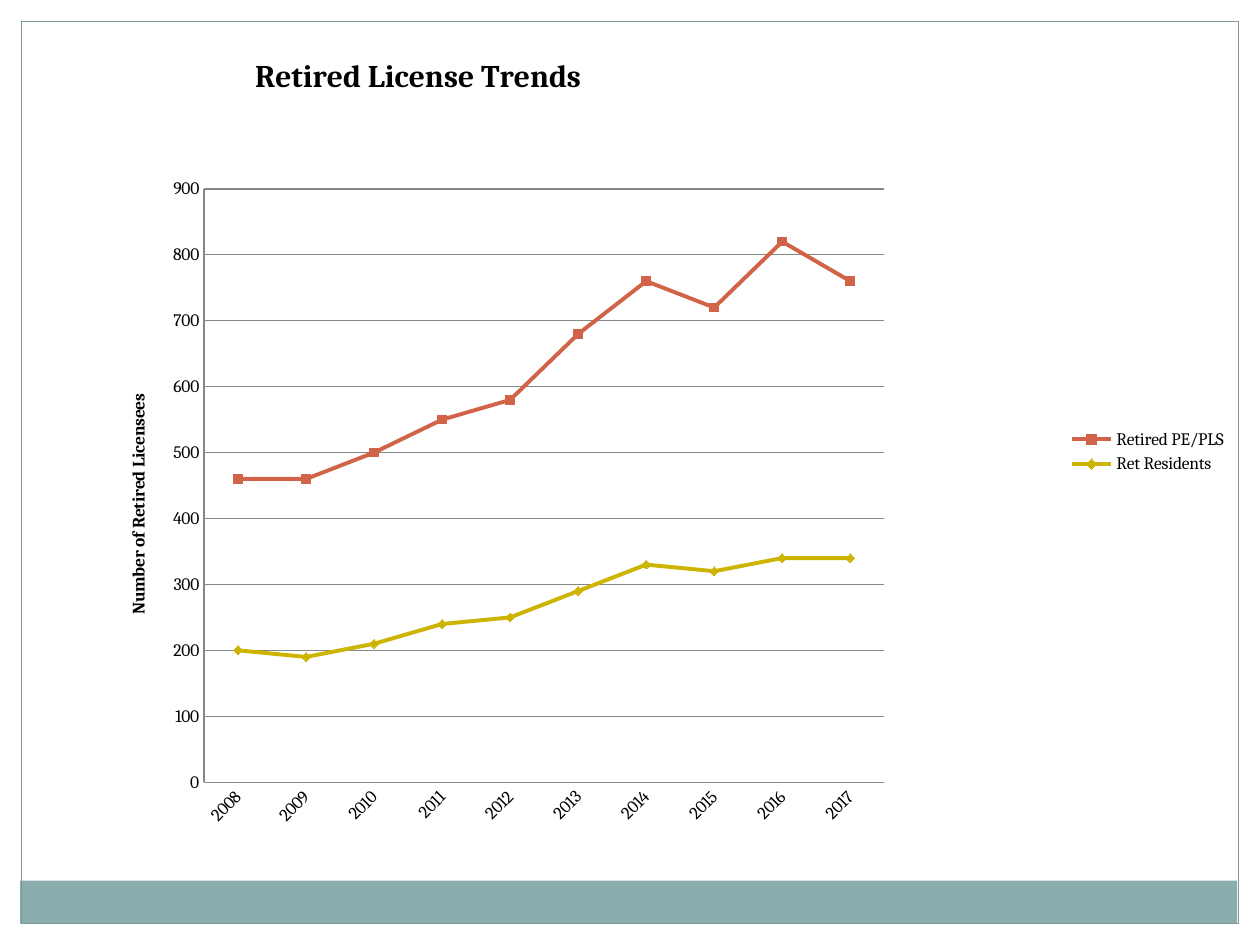
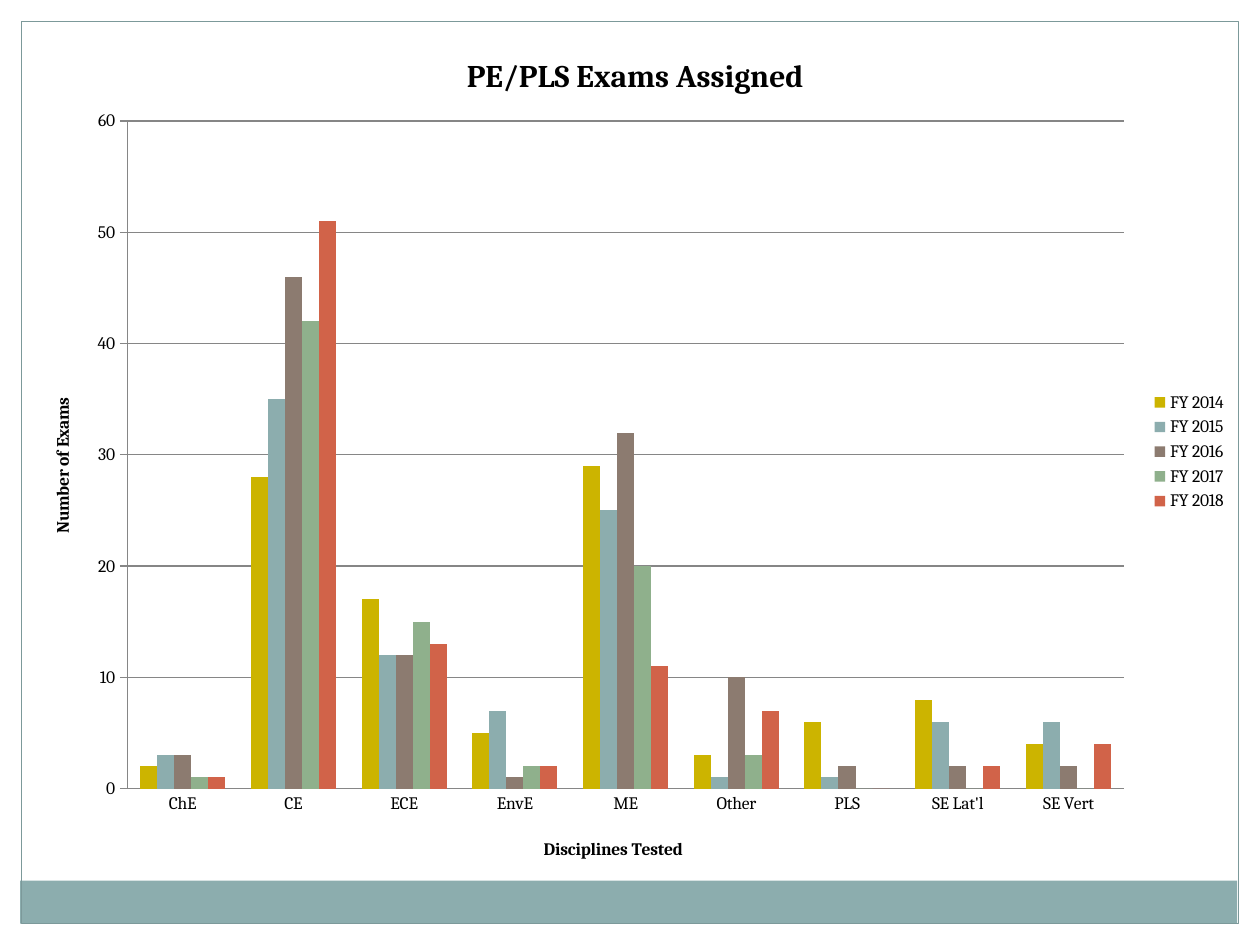
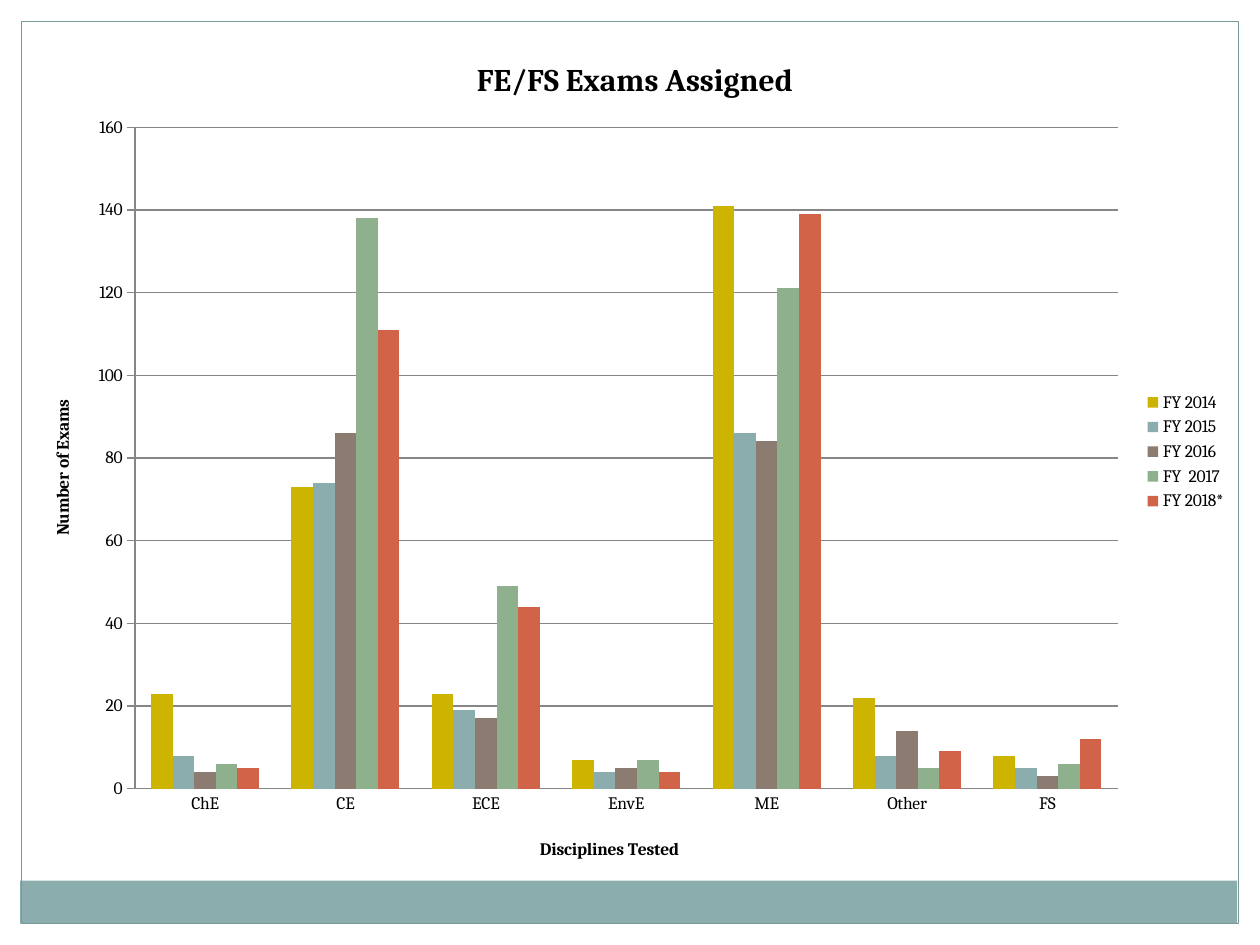
import dataclasses

import lxml.etree
import pptx
import pptx.chart.axis
import pptx.chart.chart
import pptx.chart.data
import pptx.dml.color
import pptx.enum.chart
import pptx.enum.dml
import pptx.enum.shapes
import pptx.oxml.ns
import pptx.slide
import pptx.util

WIDTH, HEIGHT = 10, 7.5
MARGIN = 0.17
CHART_WIDTH, CHART_HEIGHT = 9.67, 6.83

FONT = "Cambria"
BLACK, WHITE, GRAY = "000000", "FFFFFF", "868686"
BORDER = "7C999A"
YELLOW, TEAL, BROWN, GREEN, RED = "CCB400", "8CADAE", "8C7B70", "8FB08C", "D16349"

XL = pptx.enum.chart
Point = tuple[float, float]
Box = tuple[float, float, float, float]
qn = pptx.oxml.ns.qn


@dataclasses.dataclass(frozen=True)
class Panel:
    box: Box
    fill: str | None = None
    line: str | None = None


@dataclasses.dataclass(frozen=True)
class Title:
    text: str
    at: Point


@dataclasses.dataclass(frozen=True)
class Series:
    name: str
    values: list[int]
    color: str


@dataclasses.dataclass(frozen=True)
class ChartSlide:
    """Places are inches on the slide; charts without a category title have lines."""
    title: Title
    value_title: Title
    category_title: Title | None
    plot: Box
    maximum: int
    step: int
    categories: list[str]
    series: list[Series]


FRAME = [
    Panel((0, 0, WIDTH, MARGIN), fill=WHITE),
    Panel((WIDTH - MARGIN, 0, MARGIN, HEIGHT), fill=WHITE),
    Panel((0, 0, MARGIN, HEIGHT), fill=WHITE),
    Panel((0.16, 6.99, 9.66, 0.34), fill=TEAL),
    Panel((MARGIN, MARGIN, WIDTH - 2 * MARGIN, HEIGHT - 2 * MARGIN), line=BORDER),
]

SLIDES = [
    ChartSlide(
        Title("Retired License Trends", (1.98, 0.39)),
        Title("Number of Retired Licensees", (0.98, 3.1)),
        None,
        (1.62, 1.5, 5.4, 4.71), 900, 100,
        [str(year) for year in range(2008, 2018)],
        [
            Series("Retired PE/PLS",
                   [460, 460, 500, 550, 580, 680, 760, 720, 820, 760], RED),
            Series("Ret Residents",
                   [200, 190, 210, 240, 250, 290, 330, 320, 340, 340], YELLOW),
        ],
    ),
    ChartSlide(
        Title("PE/PLS Exams Assigned", (3.66, 0.39)),
        Title("Number of Exams", (0.38, 3.13)),
        Title("Disciplines Tested", (4.29, 6.62)),
        (1.01, 0.96, 7.91, 5.3), 60, 10,
        ["ChE", "CE", "ECE", "EnvE", "ME", "Other", "PLS", "SE Lat'l", "SE Vert"],
        [
            Series("FY 2014", [2, 28, 17, 5, 29, 3, 6, 8, 4], YELLOW),
            Series("FY 2015", [3, 35, 12, 7, 25, 1, 1, 6, 6], TEAL),
            Series("FY 2016", [3, 46, 12, 1, 32, 10, 2, 2, 2], BROWN),
            Series("FY 2017", [1, 42, 15, 2, 20, 3, 0, 0, 0], GREEN),
            Series("FY 2018", [1, 51, 13, 2, 11, 7, 0, 2, 4], RED),
        ],
    ),
    ChartSlide(
        Title("FE/FS Exams Assigned", (3.74, 0.42)),
        Title("Number of Exams", (0.38, 3.15)),
        Title("Disciplines Tested", (4.26, 6.62)),
        (1.07, 1.01, 7.8, 5.25), 160, 20,
        ["ChE", "CE", "ECE", "EnvE", "ME", "Other", "FS"],
        [
            Series("FY 2014", [23, 73, 23, 7, 141, 22, 8], YELLOW),
            Series("FY 2015", [8, 74, 19, 4, 86, 8, 5], TEAL),
            Series("FY 2016", [4, 86, 17, 5, 84, 14, 3], BROWN),
            Series("FY  2017", [6, 138, 49, 7, 121, 5, 6], GREEN),
            Series("FY 2018*", [5, 111, 44, 4, 139, 9, 12], RED),
        ],
    ),
]


def rgb(color: str) -> pptx.dml.color.RGBColor:
    return pptx.dml.color.RGBColor.from_string(color)


def inches(lengths: Box) -> list[int]:
    return [pptx.util.Inches(length) for length in lengths]


def set_fill(fill, color: str) -> None:
    fill.solid()
    fill.fore_color.rgb = rgb(color)


def set_line(line, color: str, width: float) -> None:
    line.color.rgb = rgb(color)
    line.width = pptx.util.Pt(width)


def set_font(font, size: float, bold: bool = False) -> None:
    font.name = FONT
    font.size = pptx.util.Pt(size)
    font.bold = bold
    font.color.rgb = rgb(BLACK)


def draw_panel(slide: pptx.slide.Slide, panel: Panel) -> None:
    shape = slide.shapes.add_shape(
        pptx.enum.shapes.MSO_SHAPE.RECTANGLE, *inches(panel.box))
    shape.shadow.inherit = False
    if panel.fill:
        set_fill(shape.fill, panel.fill)
    else:
        shape.fill.background()
    if panel.line:
        set_line(shape.line, panel.line, 0.75)
    else:
        shape.line.fill.background()


def place(element, box: Point | Box, index: int, inner: bool = False) -> None:
    """Pin a chart part to a place on the slide, by a manual layout."""
    for old in element.findall(qn("c:layout")):
        element.remove(old)
    layout = lxml.etree.Element(qn("c:layout"))
    element.insert(index, layout)
    manual = lxml.etree.SubElement(layout, qn("c:manualLayout"))
    settings = {"layoutTarget": "inner"} if inner else {}
    settings |= {"xMode": "edge", "yMode": "edge"}
    origins = (MARGIN, MARGIN, 0, 0)
    extents = (CHART_WIDTH, CHART_HEIGHT) * 2
    for key, length, origin, extent in zip("xywh", box, origins, extents):
        settings[key] = f"{(length - origin) / extent:.4f}"
    for key, value in settings.items():
        lxml.etree.SubElement(manual, qn(f"c:{key}")).set("val", value)


def rotate(element, degrees: int) -> None:
    body = element.find(f".//{qn('a:bodyPr')}")
    body.set("rot", str(degrees * 60000))
    body.set("vert", "horz")


def write_title(target, title: Title, size: float) -> None:
    run = target.text_frame.paragraphs[0].add_run()
    run.text = title.text
    set_font(run.font, size, bold=True)
    place(target._element, title.at, index=1)


def style_axis(axis, tick: XL.XL_TICK_MARK) -> None:
    axis.major_tick_mark = tick
    axis.minor_tick_mark = XL.XL_TICK_MARK.NONE
    set_line(axis.format.line, GRAY, 0.75)
    set_font(axis.tick_labels.font, 10)


def style_axes(chart: pptx.chart.chart.Chart, content: ChartSlide) -> None:
    has_lines = content.category_title is None
    value_axis, category_axis = chart.value_axis, chart.category_axis
    style_axis(value_axis,
               XL.XL_TICK_MARK.NONE if has_lines else XL.XL_TICK_MARK.OUTSIDE)
    value_axis.minimum_scale = 0
    value_axis.maximum_scale = content.maximum
    value_axis.major_unit = content.step
    value_axis.has_major_gridlines = True
    set_line(value_axis.major_gridlines.format.line, GRAY, 0.75)
    write_title(value_axis.axis_title, content.value_title, 10)
    rotate(value_axis.axis_title._element, -90)

    style_axis(category_axis, XL.XL_TICK_MARK.NONE)
    if has_lines:
        rotate(category_axis._element.find(qn("c:txPr")), -45)
    else:
        write_title(category_axis.axis_title, content.category_title, 10)


def style_series(chart: pptx.chart.chart.Chart, content: ChartSlide) -> None:
    plot = chart.plots[0]
    plot.vary_by_categories = False
    if content.category_title:
        plot.gap_width = 150
        for series, spec_row in zip(plot.series, content.series):
            set_fill(series.format.fill, spec_row.color)
        return
    markers = ((XL.XL_MARKER_STYLE.SQUARE, 5), (XL.XL_MARKER_STYLE.DIAMOND, 5))
    for series, row, (style, size) in zip(plot.series, content.series, markers):
        series.smooth = False
        set_line(series.format.line, row.color, 2.25)
        series.marker.style = style
        series.marker.size = size
        set_fill(series.marker.format.fill, row.color)
        set_line(series.marker.format.line, row.color, 0.75)


def draw_chart(slide: pptx.slide.Slide, content: ChartSlide) -> None:
    data = pptx.chart.data.CategoryChartData()
    data.categories = content.categories
    for series in content.series:
        data.add_series(series.name, series.values)
    kind = (XL.XL_CHART_TYPE.COLUMN_CLUSTERED if content.category_title
            else XL.XL_CHART_TYPE.LINE_MARKERS)
    box = (MARGIN, MARGIN, CHART_WIDTH, CHART_HEIGHT)
    chart = slide.shapes.add_chart(kind, *inches(box), data).chart
    set_font(chart.font, 10)
    chart.has_title = True
    write_title(chart.chart_title, content.title, 18)
    chart.has_legend = True
    chart.legend.position = XL.XL_LEGEND_POSITION.RIGHT
    chart.legend.include_in_layout = False
    set_font(chart.legend.font, 10)
    style_axes(chart, content)
    style_series(chart, content)
    plot_area = chart._chartSpace.find(f".//{qn('c:plotArea')}")
    place(plot_area, content.plot, index=0, inner=True)


def main() -> None:
    presentation = pptx.Presentation()
    presentation.slide_width = pptx.util.Inches(WIDTH)
    presentation.slide_height = pptx.util.Inches(HEIGHT)
    for content in SLIDES:
        slide = presentation.slides.add_slide(presentation.slide_layouts[6])
        set_fill(slide.background.fill, WHITE)
        for panel in FRAME:
            draw_panel(slide, panel)
        draw_chart(slide, content)
    presentation.save("out.pptx")


if __name__ == "__main__":
    main()
